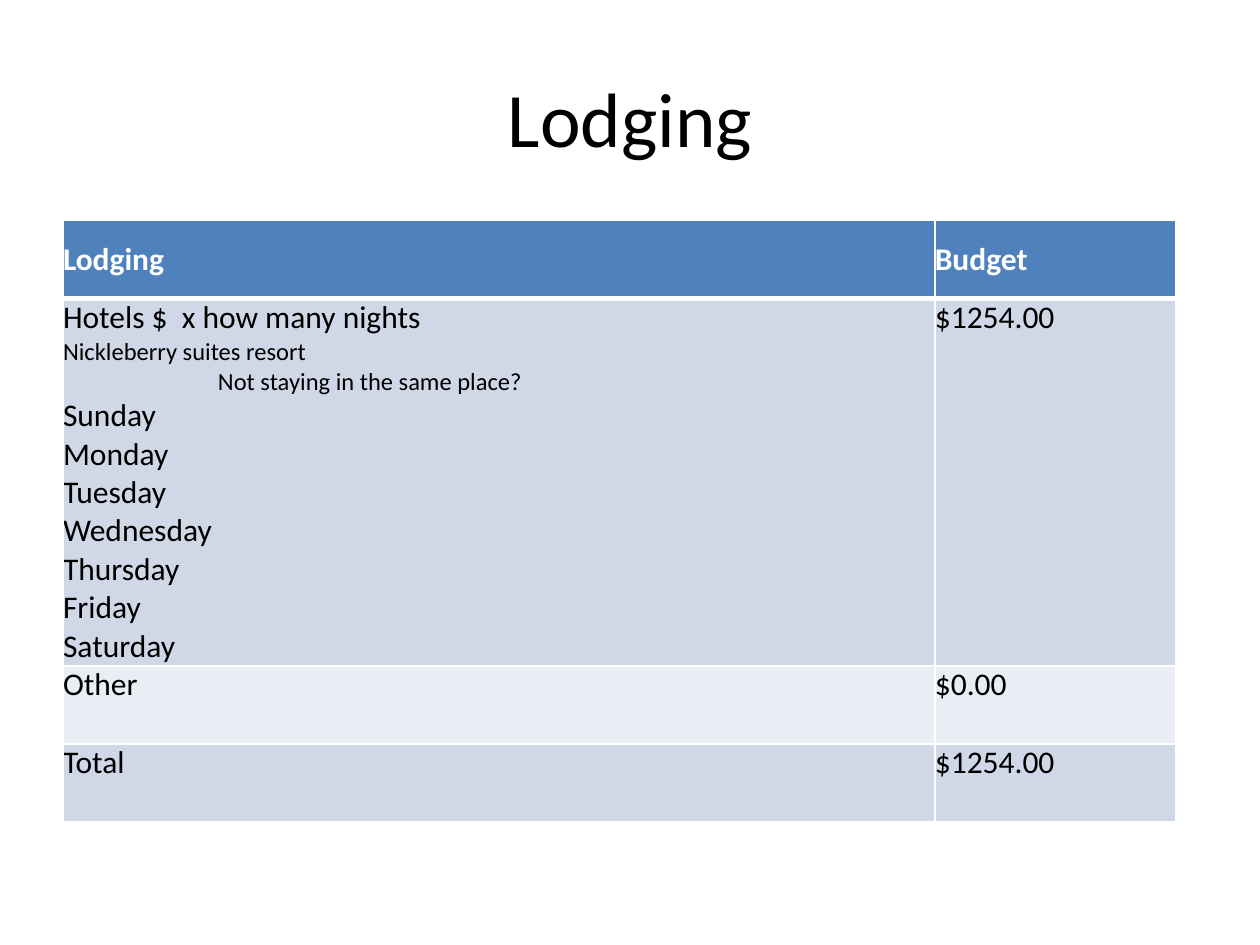
import pptx
import pptx.util
import pptx.dml.color
import pptx.enum.text
import pptx.oxml
import pptx.oxml.ns
from pptx.util import Inches

COLORS = {"text": "000000", "white": "FFFFFF", "header": "4F81BD",
          "band": "D0D8E8", "light": "E9EDF4"}
DAYS = ["Sunday", "Monday", "Tuesday", "Wednesday", "Thursday", "Friday", "Saturday"]


def add_text(tf, text, size=18, color="text", bold=False, align=None, indent=0, first=True):
    p = tf.paragraphs[0] if first else tf.add_paragraph()
    p.alignment = align
    if indent:
        p._p.get_or_add_pPr().set("marL", str(Inches(indent)))
    r = p.add_run()
    r.text = text
    r.font.name = "Calibri"
    r.font.size = pptx.util.Pt(size)
    r.font.bold = bold
    r.font.color.rgb = pptx.dml.color.RGBColor.from_string(COLORS[color])


def set_borders(cell, bottom=1):
    """Give the cell white borders; call before its fill is set."""
    tcPr = cell._tc.get_or_add_tcPr()
    for side, width in (("L", 1), ("R", 1), ("T", 1), ("B", bottom)):
        tcPr.append(pptx.oxml.parse_xml(
            f'<a:ln{side} {pptx.oxml.ns.nsdecls("a")} w="{pptx.util.Pt(width)}">'
            f'<a:solidFill><a:srgbClr val="{COLORS["white"]}"/></a:solidFill></a:ln{side}>'))


prs = pptx.Presentation()
prs.slide_width, prs.slide_height = Inches(10), Inches(7.5)
s = prs.slides.add_slide(prs.slide_layouts[5])

title = s.shapes.title
title.left, title.top = Inches(0.5), Inches(0.3)
title.width, title.height = Inches(9), Inches(1.25)
title.text_frame.vertical_anchor = pptx.enum.text.MSO_ANCHOR.MIDDLE
add_text(title.text_frame, "Lodging", size=44, align=pptx.enum.text.PP_ALIGN.CENTER)

hotel_lines = [("Hotels $  x how many nights", {}),
               ("Nickleberry suites resort", {"size": 14}),
               ("Not staying in the same place?", {"size": 14, "indent": 1.23})]
hotel_lines += [(day, {}) for day in DAYS]
header = {"color": "white", "bold": True}

# Height, fill, then the lines of each cell
rows = [
    (0.62, "header", [[("Lodging", header)], [("Budget", header)]]),
    (2.91, "band", [hotel_lines, [("$1254.00", {})]]),
    (0.62, "light", [[("Other", {})], [("$0.00", {})]]),
    (0.62, "band", [[("Total", {})], [("$1254.00", {})]]),
]
col_widths = [6.92, 1.91]

table = s.shapes.add_table(
    len(rows), len(col_widths), Inches(0.5), Inches(1.75),
    Inches(sum(col_widths)), Inches(sum(row[0] for row in rows))).table
for col, width in zip(table.columns, col_widths):
    col.width = Inches(width)

for i, (height, fill, cells) in enumerate(rows):
    is_header = i == 0
    table.rows[i].height = Inches(height)
    for j, lines in enumerate(cells):
        cell = table.cell(i, j)
        cell.margin_left = cell.margin_right = cell.margin_top = cell.margin_bottom = 0
        cell.vertical_anchor = (pptx.enum.text.MSO_ANCHOR.MIDDLE if is_header
                                else pptx.enum.text.MSO_ANCHOR.TOP)
        set_borders(cell, bottom=3 if is_header else 1)
        cell.fill.solid()
        cell.fill.fore_color.rgb = pptx.dml.color.RGBColor.from_string(COLORS[fill])
        for n, (text, style) in enumerate(lines):
            add_text(cell.text_frame, text, first=n == 0, **style)

prs.save("out.pptx")
